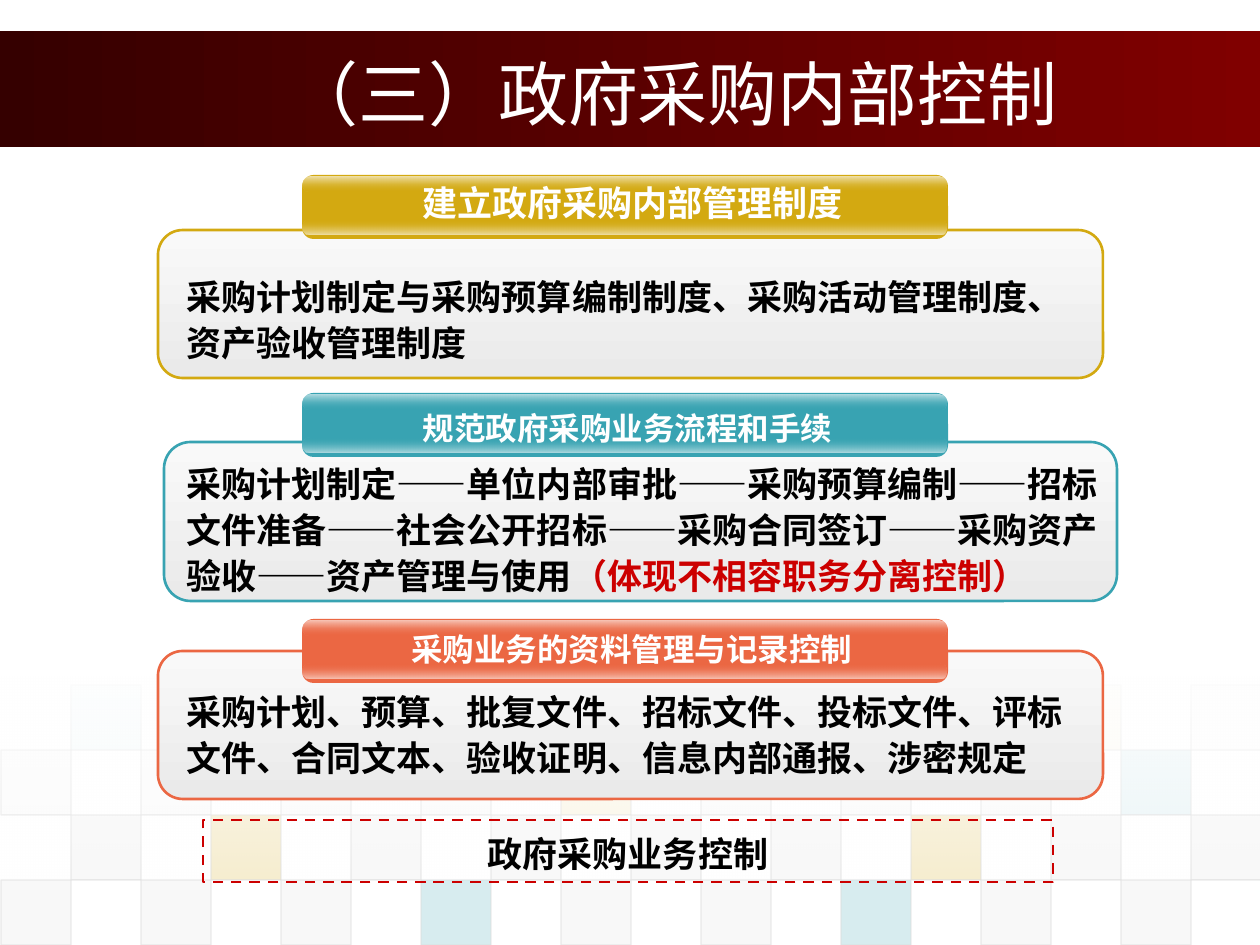
"""Build the slide on internal control of government procurement."""
from lxml import etree
from pptx import Presentation
from pptx import util as u
from pptx.dml.color import RGBColor
from pptx.enum import dml, shapes, text
from pptx.oxml.ns import qn

PX = u.Inches(1) / 126
WHITE = RGBColor(0xFF, 0xFF, 0xFF)
BLACK = RGBColor(0, 0, 0)
RED = RGBColor(0xCC, 0, 0)
MAROON = RGBColor(0x80, 0, 0)
DARK_MAROON = RGBColor(0x35, 0, 0)
GOLD = RGBColor(0xD3, 0xA9, 0x11)
TEAL = RGBColor(0x38, 0xA3, 0xB2)
ORANGE = RGBColor(0xEB, 0x67, 0x43)
GREY = RGBColor(0xDD, 0xDD, 0xDD)
LIGHT_GREY = RGBColor(0xEA, 0xEA, 0xEA)
PALE_GREY = RGBColor(0xF9, 0xF9, 0xF9)
PALE_GOLD = RGBColor(0xF1, 0xE3, 0xB0)
PALE_TEAL = RGBColor(0xB6, 0xDE, 0xE3)
PALE_ORANGE = RGBColor(0xF8, 0xC8, 0xBA)

RECT = shapes.MSO_SHAPE.RECTANGLE
ROUND = shapes.MSO_SHAPE.ROUNDED_RECTANGLE
CENTER = text.PP_ALIGN.CENTER
BODY = dict(name="Calibri", size=u.Pt(20), bold=True)

TILE_COLORS = {"D": GREY, "E": LIGHT_GREY, "G": GOLD, "T": TEAL}
TILE_ROWS = [
    (685, 5, 1, "TEETDTEGE"),
    (750, 10, 0, "DDDDGDDDT"),
    (815, 20, 1, "DGDDDDGDD"),
    (880, 20, 0, "DDDTDDTDD"),
]
PANELS = [
    (ORANGE, (158, 651, 945, 148)),
    (TEAL, (164, 442, 953, 159)),
    (GOLD, (158, 230, 945, 148)),
]
HEADERS = [
    (TEAL, PALE_TEAL, 393, "规范政府采购业务流程和手续", (405, 403, 445, 51), 18),
    (ORANGE, PALE_ORANGE, 619, "采购业务的资料管理与记录控制", (394, 624, 476, 51), 18),
    (GOLD, PALE_GOLD, 175, "建立政府采购内部管理制度", (405, 175, 455, 54), 20),
]
BODIES = [
    ((174, 265, 927, 104),
     [("采购计划制定与采购预算编制制度、采购活动管理制度、资产验收管理制度", BLACK)]),
    ((174, 680, 927, 104),
     [("采购计划、预算、批复文件、招标文件、投标文件、评标文件、"
       "合同文本、验收证明、信息内部通报、涉密规定", BLACK)]),
    ((174, 452, 942, 151),
     [("采购计划制定——单位内部审批——采购预算编制——招标文件准备——"
       "社会公开招标——采购合同签订——采购资产验收——资产管理与使用", BLACK),
      ("（体现不相容职务分离控制）", RED)]),
]


def box(values):
    return [u.Emu(round(v * PX)) for v in values]


def apply(obj, **values):
    for name, value in values.items():
        setattr(obj, name, value)


def set_alphas(sp, alphas):
    colors = sp._element.spPr.iter(qn("a:srgbClr"))
    for clr, alpha in zip(colors, alphas):
        etree.SubElement(clr, qn("a:alpha"), val=str(alpha * 1000))


def add_box(parent, kind, at, fill=None, line=None, width=1.5):
    sp = parent.shapes.add_shape(kind, *box(at))
    sp.shadow.inherit = False
    if fill is None:
        sp.fill.background()
    else:
        sp.fill.solid()
        sp.fill.fore_color.rgb = fill
    if line is None:
        sp.line.fill.background()
    else:
        sp.line.color.rgb = line
        sp.line.width = u.Pt(width)
    return sp


def add_gradient(parent, kind, at, stops, angle=270, line=None, alphas=()):
    sp = add_box(parent, kind, at, line=line)
    sp.fill.gradient()
    sp.fill.gradient_angle = angle
    for stop, color in zip(sp.fill.gradient_stops, stops):
        stop.color.rgb = color
    set_alphas(sp, alphas)
    return sp


def add_run(p, words, color, **values):
    r = p.add_run()
    r.text = words
    apply(r.font, **values)
    r.font.color.rgb = color
    return r


def add_text_shadow(r):
    fill = r._r.rPr.find(qn("a:solidFill"))
    effects = etree.Element(qn("a:effectLst"))
    shadow = etree.SubElement(effects, qn("a:outerShdw"), dist="17961", dir="2700000")
    etree.SubElement(shadow, qn("a:srgbClr"), val="000000")
    fill.addnext(effects)


def add_background(s):
    add_gradient(s, RECT, (0, 31, 1260, 116), (DARK_MAROON, MAROON), angle=0)
    for top, alpha, first, row in TILE_ROWS:
        for i, key in enumerate(row):
            at = ((first + 2 * i) * 70 + 1, top, 70, 65)
            sp = add_box(s, RECT, at, TILE_COLORS[key], GREY, 0.75)
            set_alphas(sp, (alpha, 60))
    add_gradient(s, RECT, (0, 677, 1260, 204), (WHITE, WHITE), alphas=(90, 0))


def add_title(s, words):
    title = s.shapes.title
    s.shapes._spTree.append(title._element)
    apply(title, **dict(zip(("left", "top", "width", "height"), box((164, 35, 1018, 116)))))
    tf = title.text_frame
    apply(tf, vertical_anchor=text.MSO_ANCHOR.MIDDLE, auto_size=text.MSO_AUTO_SIZE.NONE)
    tf.paragraphs[0].alignment = CENTER
    add_run(tf.paragraphs[0], words, WHITE, name="Arial", size=u.Pt(40))


def add_header_bar(s, color, pale, top):
    group = s.shapes.add_group_shape()
    bar = add_box(group, ROUND, (302, top, 646, 64), color)
    bar.adjustments[0] = 0.18
    for offset, stops, alphas in ((45, (color, pale), (0, 100)),
                                  (2, (pale, color), (100, 0))):
        at = (303, top + offset, 644, 15)
        gloss = add_gradient(group, ROUND, at, stops, alphas=alphas)
        gloss.adjustments[0] = 0.5


def add_header_text(s, words, at, size):
    tf = s.shapes.add_textbox(*box(at)).text_frame
    apply(tf, word_wrap=False, auto_size=text.MSO_AUTO_SIZE.SHAPE_TO_FIT_TEXT)
    p = tf.paragraphs[0]
    p.alignment = CENTER
    r = add_run(p, words, WHITE, **{**BODY, "size": u.Pt(size)})
    add_text_shadow(r)


def fill_body(sp, runs, align=text.PP_ALIGN.LEFT):
    tf = sp.text_frame
    apply(tf, word_wrap=True, auto_size=text.MSO_AUTO_SIZE.SHAPE_TO_FIT_TEXT)
    p = tf.paragraphs[0]
    apply(p, alignment=align, line_spacing=1.1)
    for words, color in runs:
        add_run(p, words, color, **BODY)


def main():
    prs = Presentation()
    apply(prs, slide_width=u.Inches(10), slide_height=u.Inches(7.5))
    s = prs.slides.add_slide(prs.slide_layouts[5])
    add_background(s)
    add_title(s, "（三）政府采购内部控制")
    for color, at in PANELS:
        add_gradient(s, ROUND, at, (PALE_GREY, LIGHT_GREY), line=color)
    for color, pale, top, *_ in HEADERS:
        add_header_bar(s, color, pale, top)
    for *_, words, at, size in HEADERS:
        add_header_text(s, words, at, size)
    for at, runs in BODIES:
        fill_body(s.shapes.add_textbox(*box(at)), runs)
    summary = add_box(s, RECT, (203, 820, 850, 62), line=RED)
    summary.line.dash_style = dml.MSO_LINE.DASH
    fill_body(summary, [("政府采购业务控制", BLACK)], CENTER)
    prs.save("out.pptx")


if __name__ == "__main__":
    main()
